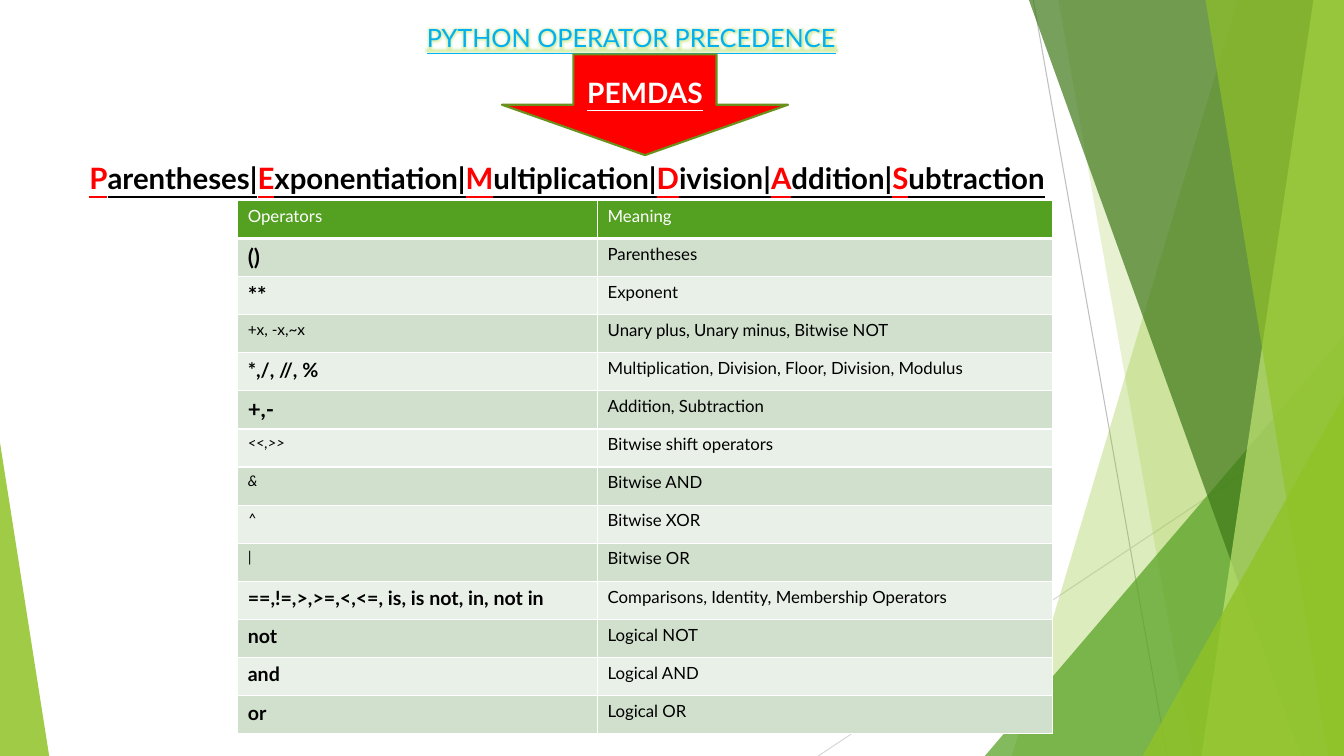
from lxml import etree
from pptx import Presentation
from pptx import util as u
from pptx.dml.color import RGBColor
from pptx.enum import shapes, text
from pptx.oxml import ns

Cm, Pt = u.Cm, u.Pt
WIDTH, HEIGHT = 33.87, 19.05
FONT = "Lato"
COLORS = {
    "white": "FFFFFF", "black": "000000", "red": "FF0000", "title": "00B0F0",
    "glow": "C0E474", "lime": "90C226", "green": "54A021", "forest": "3F7819",
    "pale": "C0E474", "outline": "6B901C", "gray": "BFBFBF", "silver": "D9D9D9",
    "odd": "D1DFCD", "even": "E9F0E8",
}
STEPS = ["Parentheses", "Exponentiation", "Multiplication", "Division", "Addition", "Subtraction"]
OPERATORS = [
    ("()", "Parentheses", 16, "b"),
    ("**", "Exponent", 16, "b"),
    ("+x, -x,~x", "Unary plus, Unary minus, Bitwise NOT", 11, ""),
    ("*,/, //, %", "Multiplication, Division, Floor, Division, Modulus", 14, "b"),
    ("+,-", "Addition, Subtraction", 16, "b"),
    ("<<,>>", "Bitwise shift operators", 10.5, "i"),
    ("&", "Bitwise AND", 10.5, "i"),
    ("^", "Bitwise XOR", 10.5, "i"),
    ("|", "Bitwise OR", 10.5, "i"),
    ("==,!=,>,>=,<,<=, is, is not, in, not in", "Comparisons, Identity, Membership Operators", 14, "b"),
    ("not", "Logical NOT", 14, "b"),
    ("and", "Logical AND", 14, "b"),
    ("or", "Logical OR", 14, "b"),
]


def rgb(name):
    return RGBColor.from_string(COLORS[name])


def sub(parent, tag, **attrs):
    return etree.SubElement(parent, ns.qn(tag), attrs)


def format_run(r, size, color, style=""):
    r.font.name = FONT
    r.font.size = Pt(size)
    r.font.color.rgb = rgb(color)
    r.font.bold = "b" in style
    r.font.italic = "i" in style
    r.font.underline = "u" in style


def fill_shape(sp, color, opacity=100):
    sp.shadow.inherit = False
    sp.fill.solid()
    sp.fill.fore_color.rgb = rgb(color)
    sp.line.fill.background()
    if opacity < 100:
        clr = sp.fill._xPr.find(ns.qn("a:solidFill"))[0]
        sub(clr, "a:alpha", val=str(opacity * 1000))


def add_line(s, x1, y1, x2, y2, color):
    line = s.shapes.add_connector(shapes.MSO_CONNECTOR.STRAIGHT, Cm(x1), Cm(y1), Cm(x2), Cm(y2))
    line.line.color.rgb = rgb(color)
    line.line.width = Pt(0.75)
    sub(line._element.spPr, "a:effectLst")


def add_band(s, top_x, bottom_x, color, opacity):
    builder = s.shapes.build_freeform(Cm(top_x), 0)
    corners = [(WIDTH, 0), (WIDTH, HEIGHT), (bottom_x, HEIGHT)]
    builder.add_line_segments([(Cm(x), Cm(y)) for x, y in corners], close=True)
    fill_shape(builder.convert_to_shape(), color, opacity)


def add_triangle(s, x, y, w, apex, color, opacity):
    sp = s.shapes.add_shape(shapes.MSO_SHAPE.ISOSCELES_TRIANGLE, Cm(x), Cm(y), Cm(w), Cm(HEIGHT - y))
    sp.adjustments[0] = apex
    fill_shape(sp, color, opacity)


def add_decor(s):
    add_line(s, 26.04, 0, 29.41, HEIGHT, "gray")
    add_line(s, WIDTH, 10.24, 20.62, HEIGHT, "silver")
    add_band(s, 31.19, 25.5, "lime", 30)
    add_band(s, 26.67, 30.05, "lime", 20)
    add_triangle(s, 24.82, 8.46, 9.05, 1, "green", 72)
    add_band(s, 25.93, 32.79, "forest", 70)
    add_band(s, 33.1, 30.28, "pale", 70)
    add_band(s, 30.38, 33.48, "lime", 65)
    add_triangle(s, 28.8, 9.98, 5.07, 1, "lime", 80)
    add_triangle(s, 0, 11.15, 1.24, 0, "lime", 85)


def add_text(s, x, y, w, h, parts, size, style):
    sp = s.shapes.add_textbox(Cm(x), Cm(y), Cm(w), Cm(h))
    tf = sp.text_frame
    tf.word_wrap = True
    tf.auto_size = text.MSO_AUTO_SIZE.SHAPE_TO_FIT_TEXT
    p = tf.paragraphs[0]
    p.alignment = text.PP_ALIGN.CENTER
    for words, color in parts:
        r = p.add_run()
        r.text = words
        format_run(r, size, color, style)
    return sp


def add_glow(r, color):
    effects = etree.Element(ns.qn("a:effectLst"))
    glow = sub(effects, "a:glow", rad=str(Pt(5)))
    sub(sub(glow, "a:srgbClr", val=COLORS[color]), "a:alpha", val="60000")
    r.font._element.find(ns.qn("a:solidFill")).addnext(effects)


def add_arrow(s, x, y, w, h, label):
    sp = s.shapes.add_shape(shapes.MSO_SHAPE.DOWN_ARROW, Cm(x), Cm(y), Cm(w), Cm(h))
    fill_shape(sp, "red")
    sp.line.color.rgb = rgb("outline")
    sp.line.width = Pt(1.5)
    tf = sp.text_frame
    tf.text = label
    tf.vertical_anchor = text.MSO_ANCHOR.MIDDLE
    p = tf.paragraphs[0]
    p.alignment = text.PP_ALIGN.CENTER
    format_run(p.runs[0], 20, "white", "bu")


def set_cell(cell, words, size, color, style, fill, bottom=1):
    cell.text = words
    format_run(cell.text_frame.paragraphs[0].runs[0], size, color, style)
    tcPr = cell._tc.get_or_add_tcPr()
    for side, width in zip("LRTB", (1, 1, 1, bottom)):
        ln = sub(tcPr, f"a:ln{side}", w=str(Pt(width)))
        sub(sub(ln, "a:solidFill"), "a:srgbClr", val=COLORS["white"])
    cell.fill.solid()
    cell.fill.fore_color.rgb = rgb(fill)


def add_operator_table(s, x, y, col_widths, row_height):
    count = len(OPERATORS) + 1
    table = s.shapes.add_table(count, 2, Cm(x), Cm(y), Cm(sum(col_widths)), Cm(row_height * count)).table
    for col, width in zip(table.columns, col_widths):
        col.width = Cm(width)
    for row in table.rows:
        row.height = Cm(row_height)
    for col, heading in enumerate(("Operators", "Meaning")):
        set_cell(table.cell(0, col), heading, 12, "white", "", "green", bottom=3)
    for row, (operator, meaning, size, style) in enumerate(OPERATORS, 1):
        fill = "odd" if row % 2 else "even"
        set_cell(table.cell(row, 0), operator, size, "black", style, fill)
        set_cell(table.cell(row, 1), meaning, 12, "black", "", fill)


def main():
    prs = Presentation()
    prs.slide_width, prs.slide_height = Cm(WIDTH), Cm(HEIGHT)
    s = prs.slides.add_slide(prs.slide_layouts[6])
    add_decor(s)
    title = add_text(s, 4.34, 0.43, 23.14, 1.02, [("PYTHON OPERATOR PRECEDENCE", "title")], 18, "u")
    add_glow(title.text_frame.paragraphs[0].runs[0], "glow")
    add_arrow(s, 12.65, 1.37, 7.21, 2.54, "PEMDAS")
    parts = []
    for step in STEPS:
        divider = "" if step == STEPS[-1] else "|"
        parts += [(step[0], "red"), (step[1:] + divider, "black")]
    add_text(s, 0, 3.91, 28.58, 1.14, parts, 21, "bu")
    add_operator_table(s, 5.99, 5.05, (9.07, 11.46), 0.96)
    prs.save("out.pptx")


if __name__ == "__main__":
    main()
